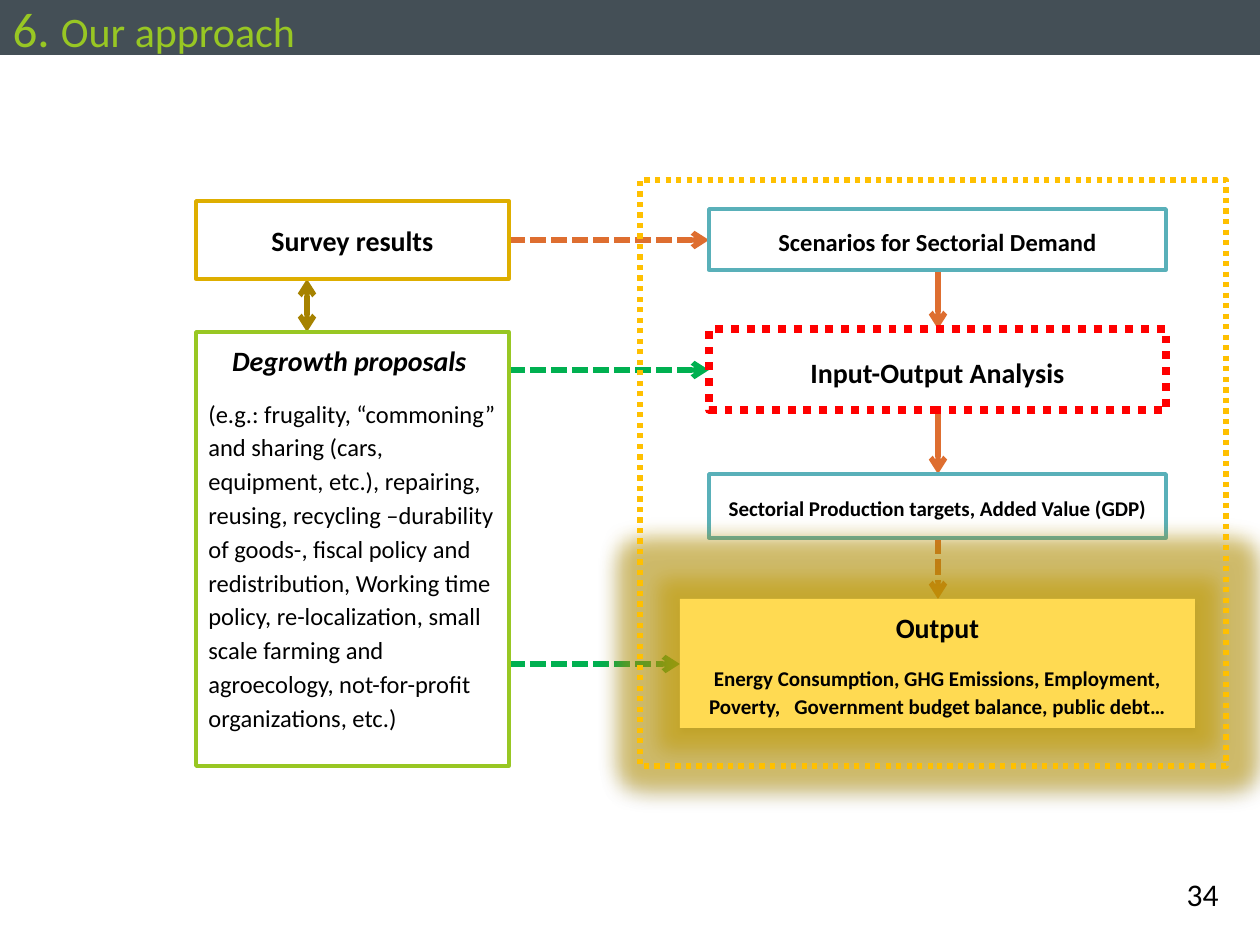
"""Build the "Our approach" flow slide."""
from lxml.etree import SubElement
from pptx import Presentation
from pptx.dml.color import RGBColor
from pptx.enum.dml import MSO_LINE
from pptx.enum.shapes import MSO_CONNECTOR, MSO_SHAPE
from pptx.enum.text import MSO_ANCHOR, PP_ALIGN
from pptx.oxml import parse_xml
from pptx.oxml.ns import nsdecls, qn
from pptx.util import Emu, Pt

PIXEL = 914400 / 126
DASH, DOT = MSO_LINE.SQUARE_DOT, MSO_LINE.ROUND_DOT
LEFT, CENTER, RIGHT = PP_ALIGN.LEFT, PP_ALIGN.CENTER, PP_ALIGN.RIGHT
SPACED = {"line_spacing": 1.15, "space_after": Pt(10)}
GLOW = f"""<a:effectLst {nsdecls('a')}>
  <a:glow rad="300000"><a:srgbClr val="C8A000"><a:alpha val="50000"/></a:srgbClr></a:glow>
  <a:outerShdw blurRad="44450" dist="27940" dir="5400000" algn="ctr" rotWithShape="0">
    <a:srgbClr val="000000"><a:alpha val="32000"/></a:srgbClr></a:outerShdw>
</a:effectLst>"""


def color(value):
    return RGBColor.from_string(value)


def add_text(para, text, size, ink="000000", **formats):
    span = para.add_run()
    span.text = text
    span.font.color.rgb = color(ink)
    for name, value in {"name": "Calibri", "size": Pt(size), **formats}.items():
        setattr(span.font, name, value)


deck = Presentation()
deck.slide_width, deck.slide_height = Emu(9144000), Emu(6858000)
page = deck.slides.add_slide(deck.slide_layouts[5])

title = page.shapes.title
bounds = dict(left=0, top=0, width=1260, height=55)
for name, value in bounds.items():
    setattr(title, name, Emu(round(value * PIXEL)))
title.fill.solid()
title.fill.fore_color.rgb = color("444F56")
title.text_frame.vertical_anchor = MSO_ANCHOR.MIDDLE
heading = title.text_frame.paragraphs[0]
heading.alignment = LEFT
add_text(heading, "6. ", 28, "98C723")
add_text(heading, "Our approach", 24, "98C723")

number_place = [Emu(round(value * PIXEL)) for value in (1150, 869, 81, 50)]
number_box = page.shapes.add_textbox(*number_place)
number_box.text_frame.word_wrap = True
number = number_box.text_frame.paragraphs[0]
number.alignment = RIGHT
add_text(number, "34", 18)

arrows = [
    ((509, 664, 680, 664), "00B050", DASH, ["tailEnd"]),
    ((307, 332, 307, 279), "A68200", None, ["headEnd", "tailEnd"]),
    ((938, 538, 938, 599), "DE6E30", DASH, ["tailEnd"]),
    ((509, 240, 709, 240), "DE6E30", DASH, ["tailEnd"]),
    ((938, 270, 938, 329), "DE6E30", None, ["tailEnd"]),
    ((938, 410, 938, 474), "DE6E30", None, ["tailEnd"]),
    ((509, 370, 709, 370), "00B050", DASH, ["tailEnd"]),
]
for ends, ink, dash, heads in arrows:
    points = [Emu(round(value * PIXEL)) for value in ends]
    arrow = page.shapes.add_connector(MSO_CONNECTOR.STRAIGHT, *points)
    arrow.line.color.rgb = color(ink)
    arrow.line.width = Pt(3)
    if dash:
        arrow.line.dash_style = dash
    for head in heads:
        SubElement(arrow.line._get_or_add_ln(), qn(f"a:{head}"), type="arrow")
    SubElement(arrow._element.spPr, qn("a:effectLst"))

proposals = (
    "(e.g.: frugality, “commoning” and sharing (cars, equipment, etc.), repairing, "
    "reusing, recycling –durability of goods-, fiscal policy and redistribution, "
    "Working time policy, re-localization, small scale farming and agroecology, "
    "not-for-profit organizations, etc.)"
)
outputs = (
    "Energy Consumption, GHG Emissions, Employment, Poverty,   "
    "Government budget balance, public debt…"
)
bold = {"bold": True}
middle, top = MSO_ANCHOR.MIDDLE, MSO_ANCHOR.TOP
boxes = [
    ((196, 201, 313, 78), "FFFFFF", ("DEAE00", 2, None), middle,
     [("Survey results", 16, CENTER, bold, {})]),
    ((709, 474, 457, 64), "FFFFFF", ("59B0B9", 2, None), middle,
     [("Sectorial Production targets, Added Value (GDP)", 12, CENTER, bold, SPACED)]),
    ((709, 329, 457, 81), None, ("FF0000", 4.5, DOT), middle,
     [("Input-Output Analysis", 16, CENTER, bold, SPACED)]),
    ((680, 599, 515, 129), "FFDA52", None, top,
     [("Output", 16, CENTER, bold, SPACED), (outputs, 12, CENTER, bold, SPACED)]),
    ((709, 209, 457, 61), "FFFFFF", ("59B0B9", 2, None), middle,
     [("Scenarios for Sectorial Demand", 14, CENTER, bold, SPACED)]),
    ((196, 332, 313, 434), "FFFFFF", ("98C723", 2, None), top,
     [("Degrowth proposals ", 16, CENTER, {"bold": True, "italic": True}, SPACED),
      (proposals, 14, LEFT, {}, SPACED)]),
    ((640, 180, 586, 586), None, ("FFC000", 3, DOT), middle, []),
]
for place, fill, outline, anchor, paragraphs in boxes:
    bounds = [Emu(round(value * PIXEL)) for value in place]
    box = page.shapes.add_shape(MSO_SHAPE.RECTANGLE, *bounds)
    if fill:
        box.fill.solid()
        box.fill.fore_color.rgb = color(fill)
    else:
        box.fill.background()
    if outline:
        ink, width, dash = outline
        box.line.color.rgb = color(ink)
        box.line.width = Pt(width)
        if dash:
            box.line.dash_style = dash
        box.shadow.inherit = False
    else:
        box.line.fill.background()
        box._element.spPr.append(parse_xml(GLOW))
    frame = box.text_frame
    frame.word_wrap = True
    frame.vertical_anchor = anchor
    for index, (text, size, alignment, formats, spacing) in enumerate(paragraphs):
        para = frame.add_paragraph() if index else frame.paragraphs[0]
        for name, value in {"alignment": alignment, **spacing}.items():
            setattr(para, name, value)
        add_text(para, text, size, **formats)

deck.save("out.pptx")
